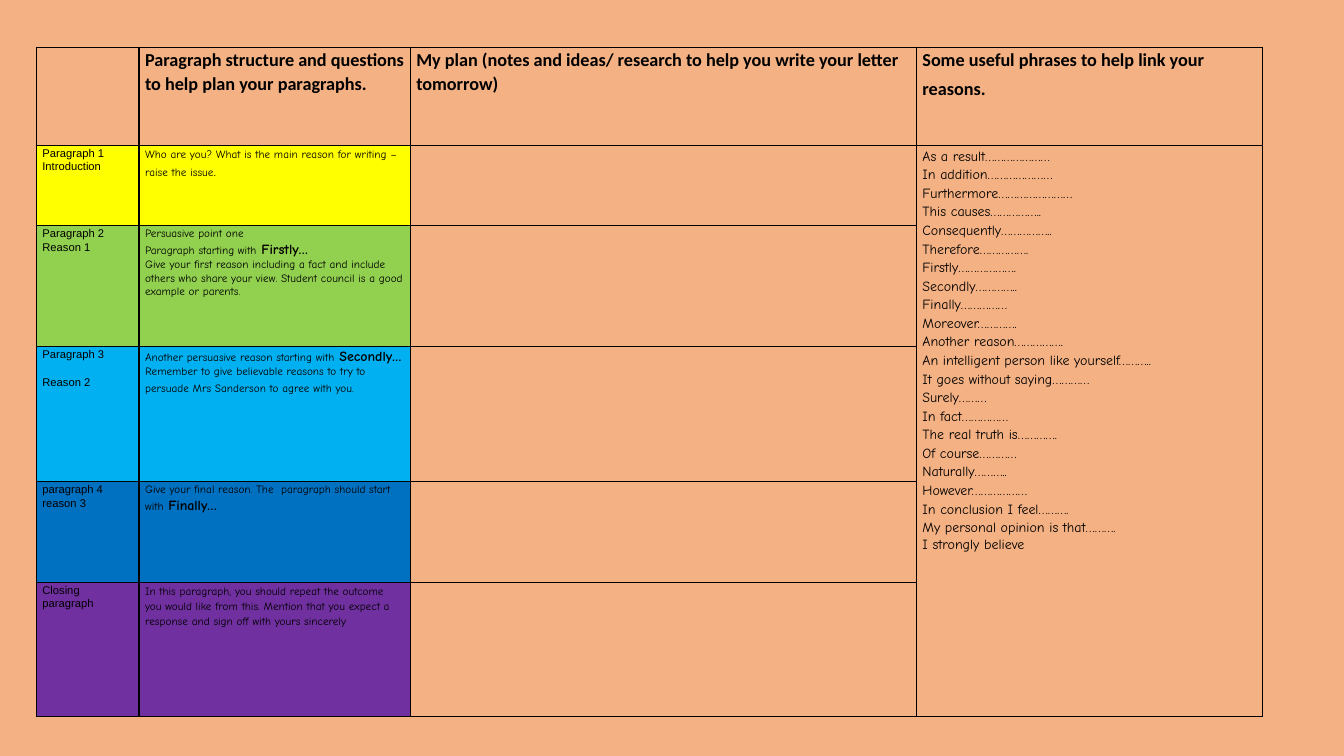
from lxml.etree import SubElement
from pptx import Presentation
from pptx.dml.color import RGBColor
from pptx.oxml.ns import qn
from pptx.util import Emu, Pt

PX = 9144  # 100 px to the inch
BLACK = "000000"

# Text styles: size, font, bold
HEADING = (13, "Calibri", True)
HEADING_GAP = (17, "Arial", False)
LABEL = (8, "Arial", False)
NOTE = (8, "Comic Neue", False)
PHRASE = (10, "Comic Neue", False)
OPENER = (10, "Comic Neue", True)


def color(hex_string):
    return RGBColor.from_string(hex_string)


def write_cell(cell, paragraphs):
    """Each paragraph is (line spacing, space after, [(text, style), ...])."""
    frame = cell.text_frame
    for index, (spacing, after, runs) in enumerate(paragraphs):
        paragraph = frame.paragraphs[0] if index == 0 else frame.add_paragraph()
        paragraph.line_spacing = spacing
        paragraph.space_after = Pt(after)
        for text, (size, font, bold) in runs:
            run = paragraph.add_run()
            run.text = text
            run.font.size = Pt(size)
            run.font.name = font
            run.font.bold = bold
            run.font.color.rgb = color(BLACK)


# Content
headings = [
    [("Paragraph structure and questions to help plan your paragraphs.", HEADING)],
    [("My plan (notes and ideas/ research to help you write your letter tomorrow)", HEADING)],
    [("Some useful phrases to help link your reasons.", HEADING), (" ", HEADING_GAP)],
]

# Row colour, label lines, space after each label line, guidance paragraphs
sections = [
    ("FFFF00", ["Paragraph 1", "Introduction"], 0, [
        (1.15, 0, [("Who are you? What is the main reason for writing – raise the issue", NOTE),
                   (".", PHRASE)]),
    ]),
    ("92D050", ["Paragraph 2", "Reason 1"], 0, [
        (1.06, 0, [("Persuasive point one", NOTE)]),
        (1.06, 0, [("Paragraph starting with", NOTE), (" ", PHRASE), ("Firstly…", OPENER)]),
        (1.06, 0, [("Give your first reason including a fact and include others who share "
                    "your view. Student council is a good example or parents.", NOTE)]),
    ]),
    ("00B0F0", ["Paragraph 3", "Reason 2"], 10, [
        (1.06, 0, [("Another persuasive reason starting with", NOTE), (" ", PHRASE),
                   ("Secondly… ", OPENER),
                   ("Remember to give believable reasons to try to persuade "
                    "Mrs Sanderson to agree with you.", NOTE), (" ", PHRASE)]),
    ]),
    ("0070C0", ["paragraph 4", "reason 3"], 0, [
        (1.06, 0, [("Give your final reason. The  paragraph should start with", NOTE),
                   (" ", PHRASE), ("Finally…", OPENER)]),
    ]),
    ("7030A0", ["Closing paragraph"], 0, [
        (1.15, 10, [("In this paragraph, you should repeat the outcome you would like from "
                     "this. Mention that you expect a response and sign off with yours "
                     "sincerely", NOTE)]),
    ]),
]

phrases = [
    "As a result…………………", "In addition…………………", "Furthermore……………………",
    "This causes……………..", "Consequently……………..", "Therefore…………….",
    "Firstly……………….", "Secondly…………..", "Finally……………", "Moreover………….",
    "Another reason…………….", "An intelligent person like yourself………..",
    "It goes without saying…………", "Surely………", "In fact……………",
    "The real truth is………….", "Of course…………", "Naturally………..",
    "However………………", "In conclusion I feel……….",
    "My personal opinion is that……….", "I strongly believe",
]

# Slide
presentation = Presentation()
presentation.slide_width = Emu(1333 * PX)
presentation.slide_height = Emu(750 * PX)
slide = presentation.slides.add_slide(presentation.slide_layouts[6])
slide.background.fill.solid()
slide.background.fill.fore_color.rgb = color("F4B183")

# Table grid
column_widths = [102, 269, 502, 343]
row_heights = [97, 80, 120, 134, 100, 133]
table = slide.shapes.add_table(
    len(row_heights), len(column_widths), Emu(36 * PX), Emu(47 * PX),
    Emu(sum(column_widths) * PX), Emu(sum(row_heights) * PX)).table
table.first_row = False
table.horz_banding = False
for column, width in zip(table.columns, column_widths):
    column.width = Emu(width * PX)
for row, height in zip(table.rows, row_heights):
    row.height = Emu(height * PX)

# Margins and borders, with the borders ahead of the fill in the XML
for cell in table.iter_cells():
    cell.margin_left = cell.margin_right = Emu(6 * PX)
    cell.margin_top = Emu(1 * PX)
    cell.margin_bottom = 0
    properties = cell._tc.get_or_add_tcPr()
    for side in ("a:lnL", "a:lnR", "a:lnT", "a:lnB"):
        line = SubElement(properties, qn(side), w=str(Pt(1)))
        line_fill = SubElement(line, qn("a:solidFill"))
        SubElement(line_fill, qn("a:srgbClr"), val=BLACK)
    cell.fill.background()

# Heading row
for column_index, runs in enumerate(headings, start=1):
    write_cell(table.cell(0, column_index), [(1.06, 0, runs)])

# Coloured paragraph rows
for row_index, (fill, labels, label_gap, guidance) in enumerate(sections, start=1):
    label_lines = [(1.06, label_gap, [(label, LABEL)]) for label in labels]
    for column_index, paragraphs in enumerate([label_lines, guidance]):
        cell = table.cell(row_index, column_index)
        cell.fill.solid()
        cell.fill.fore_color.rgb = color(fill)
        write_cell(cell, paragraphs)

# Linking phrases beside all paragraph rows
phrase_cell = table.cell(1, 3)
phrase_cell.merge(table.cell(len(sections), 3))
write_cell(phrase_cell, [(1.15, 0, [(phrase, PHRASE)]) for phrase in phrases])
phrase_cell.text_frame.paragraphs[-1].line_spacing = 1.06

presentation.save("out.pptx")
